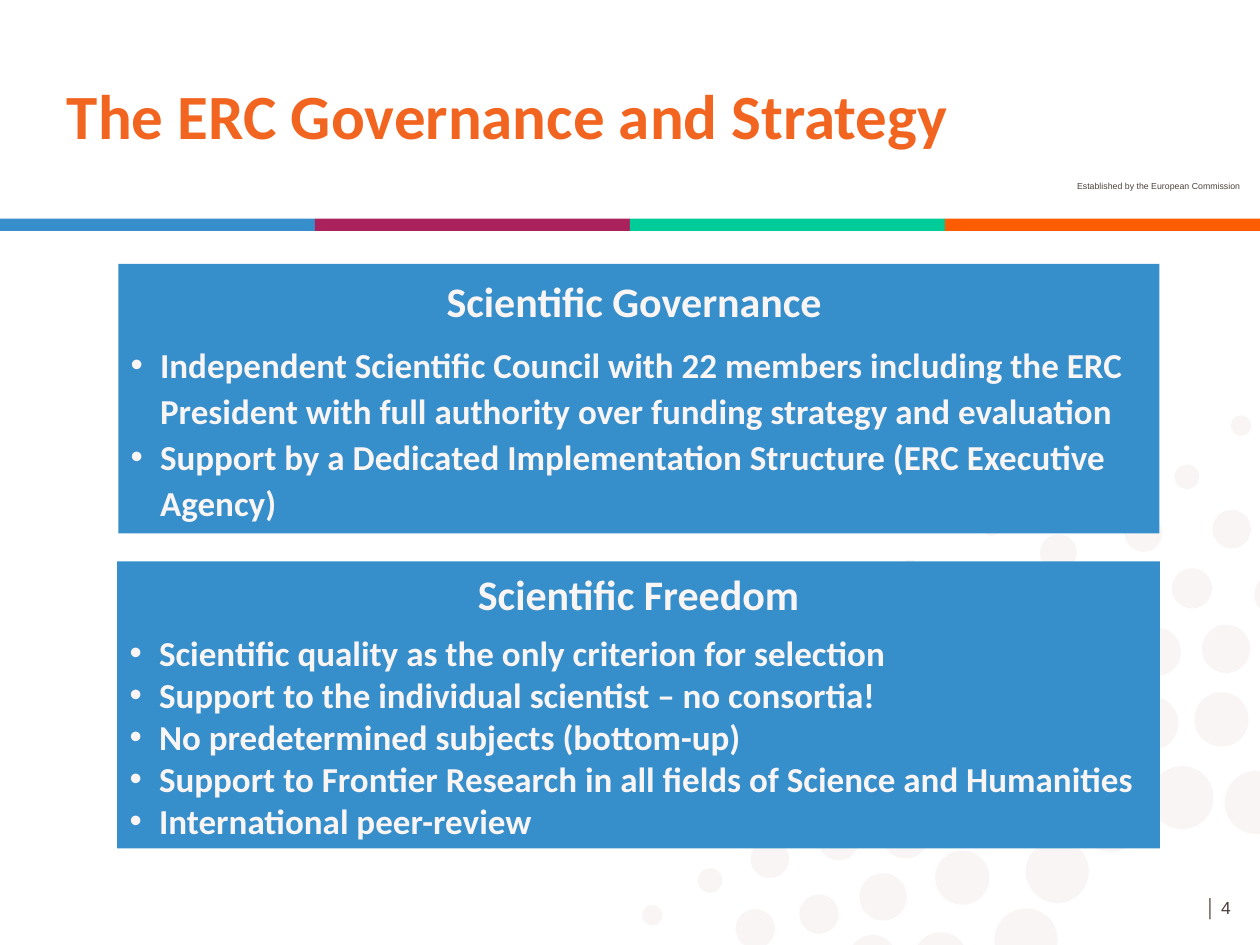
from typing import NamedTuple

from lxml import etree
from pptx import Presentation
from pptx.dml.color import RGBColor
from pptx.enum.shapes import MSO_SHAPE
from pptx.enum.text import MSO_ANCHOR, PP_ALIGN
from pptx.oxml.ns import qn
from pptx.util import Pt

RECT, OVAL = MSO_SHAPE.RECTANGLE, MSO_SHAPE.OVAL
TOP, MIDDLE = MSO_ANCHOR.TOP, MSO_ANCHOR.MIDDLE
LEFT, CENTER = PP_ALIGN.LEFT, PP_ALIGN.CENTER

COLORS = {
    "dot": "FAF5F5", "light": "FAF5F5", "blue": "368ECA", "plum": "AA225C",
    "green": "00CC99", "orange": "FD5C03", "title": "F16521", "grey": "4B413C",
}
SLIDE_W, SLIDE_H = 720, 540
BULLET_INDENT = 16.8
DOT_ROTATION = 60


class Dot(NamedTuple):
    cx: float
    cy: float
    d: float


class Label(NamedTuple):
    text: str
    left: float
    top: float
    width: float
    height: float
    size: float
    font: str
    color: str
    bold: bool = False
    align: PP_ALIGN = LEFT
    anchor: MSO_ANCHOR = MIDDLE


class Panel(NamedTuple):
    heading: str
    bullets: list[str]
    left: float
    top: float
    width: float
    height: float
    inset_top: float
    heading_gap: float
    line_spacing: float


DOTS = [Dot(*d) for d in (
    (586.3, 537.1, 36), (604.2, 498, 36), (634.7, 469.6, 34.5), (675.4, 455.8, 36),
    (717.8, 458.6, 36), (658.1, 413.3, 30.5), (698, 411.1, 31), (549.9, 501.5, 31),
    (537.5, 548.3, 31), (661, 372.5, 27.5), (700.6, 370.8, 27.5),
    (498.6, 548, 27.5), (504.6, 512.5, 27), (517.5, 476.8, 27.5),
    (468, 522.4, 22.5), (479.2, 480.2, 23), (681.1, 336.2, 23),
    (727.9, 339.8, 22.5), (431.6, 530.8, 22.5), (439.9, 490.8, 22),
    (604.8, 315.8, 21), (653.4, 304.6, 21.5), (703.8, 302.4, 22),
    (372.7, 523, 11.5), (469.8, 329.8, 11.5), (709.2, 243.2, 11.5),
    (405.7, 503.2, 14), (519.8, 326.9, 14), (566.6, 299.2, 14),
    (678.2, 272.5, 14),
)]
BAND = ["blue", "plum", "green", "orange"]
LABELS = [
    Label("Established by the European Commission", 608.4, 99.6, 113.6, 13.5,
          5, "Arial", "grey", anchor=TOP),
    Label("│ 4", 672, 497, 48, 43, 10, "Arial", "grey", align=CENTER),
    Label("The ERC Governance and Strategy", 31.2, 37.5, 606, 55.5,
          36, "Calibri", "title", bold=True),
]
PANELS = [
    Panel("Scientific Freedom", [
        "Scientific quality as the only criterion for selection",
        "Support to the individual scientist – no consortia!",
        "No predetermined subjects (bottom-up)",
        "Support to Frontier Research in all fields of Science and Humanities",
        "International peer-review",
    ], 67, 320.8, 595.8, 164, 4.2, 7, 1.0),
    Panel("Scientific Governance ", [
        "Independent Scientific Council with 22 members including the ERC "
        "President with full authority over funding strategy and evaluation",
        "Support by a Dedicated Implementation Structure (ERC Executive Agency)",
    ], 67.6, 150.8, 595, 154, 3.6, 7.8, 1.1),
]


def rgb(name: str) -> RGBColor:
    return RGBColor.from_string(COLORS[name])


def add_block(s, kind, left: float, top: float, width: float, height: float, color: str):
    sp = s.shapes.add_shape(kind, Pt(left), Pt(top), Pt(width), Pt(height))
    sp.shadow.inherit = False
    sp.fill.solid()
    sp.fill.fore_color.rgb = rgb(color)
    sp.line.fill.background()
    return sp


def add_dot(s, dot: Dot) -> None:
    sp = add_block(s, OVAL, dot.cx - dot.d / 2, dot.cy - dot.d / 2, dot.d, dot.d, "dot")
    sp.rotation = DOT_ROTATION


def style(p, size: float, font: str, color: str, bold: bool) -> None:
    for r in p.runs:
        r.font.size = Pt(size)
        r.font.name = font
        r.font.bold = bold
        r.font.color.rgb = rgb(color)


def add_bullet(p) -> None:
    pPr = p._p.get_or_add_pPr()
    pPr.set("marL", str(Pt(BULLET_INDENT)))
    pPr.set("indent", str(-Pt(BULLET_INDENT)))
    etree.SubElement(pPr, qn("a:buFont")).set("typeface", "Arial")
    etree.SubElement(pPr, qn("a:buChar")).set("char", "•")


def add_label(s, label: Label) -> None:
    sp = s.shapes.add_textbox(Pt(label.left), Pt(label.top), Pt(label.width), Pt(label.height))
    tf = sp.text_frame
    tf.word_wrap = True
    tf.vertical_anchor = label.anchor
    tf.text = label.text
    p = tf.paragraphs[0]
    p.alignment = label.align
    style(p, label.size, label.font, label.color, label.bold)


def add_panel(s, panel: Panel) -> None:
    sp = add_block(s, RECT, panel.left, panel.top, panel.width, panel.height, "blue")
    tf = sp.text_frame
    tf.word_wrap = True
    tf.vertical_anchor = TOP
    tf.margin_top = Pt(panel.inset_top)
    tf.text = "\n".join([panel.heading, *panel.bullets])
    heading, *bullets = tf.paragraphs
    heading.alignment = CENTER
    heading.line_spacing = panel.line_spacing
    heading.space_after = Pt(panel.heading_gap)
    style(heading, 24, "Calibri", "light", True)
    for p in bullets:
        add_bullet(p)
        p.alignment = LEFT
        p.line_spacing = panel.line_spacing
        style(p, 20, "Calibri", "light", True)


def main() -> None:
    prs = Presentation()
    prs.slide_width, prs.slide_height = Pt(SLIDE_W), Pt(SLIDE_H)
    s = prs.slides.add_slide(prs.slide_layouts[6])

    # Background dots
    for dot in DOTS:
        add_dot(s, dot)

    # Four-colour band
    width = SLIDE_W / len(BAND)
    for i, color in enumerate(BAND):
        add_block(s, RECT, i * width, 124.9, width, 7, color)

    # Title, tagline and page number
    for label in LABELS:
        add_label(s, label)

    # Content panels
    for panel in PANELS:
        add_panel(s, panel)

    prs.save("out.pptx")


if __name__ == "__main__":
    main()
